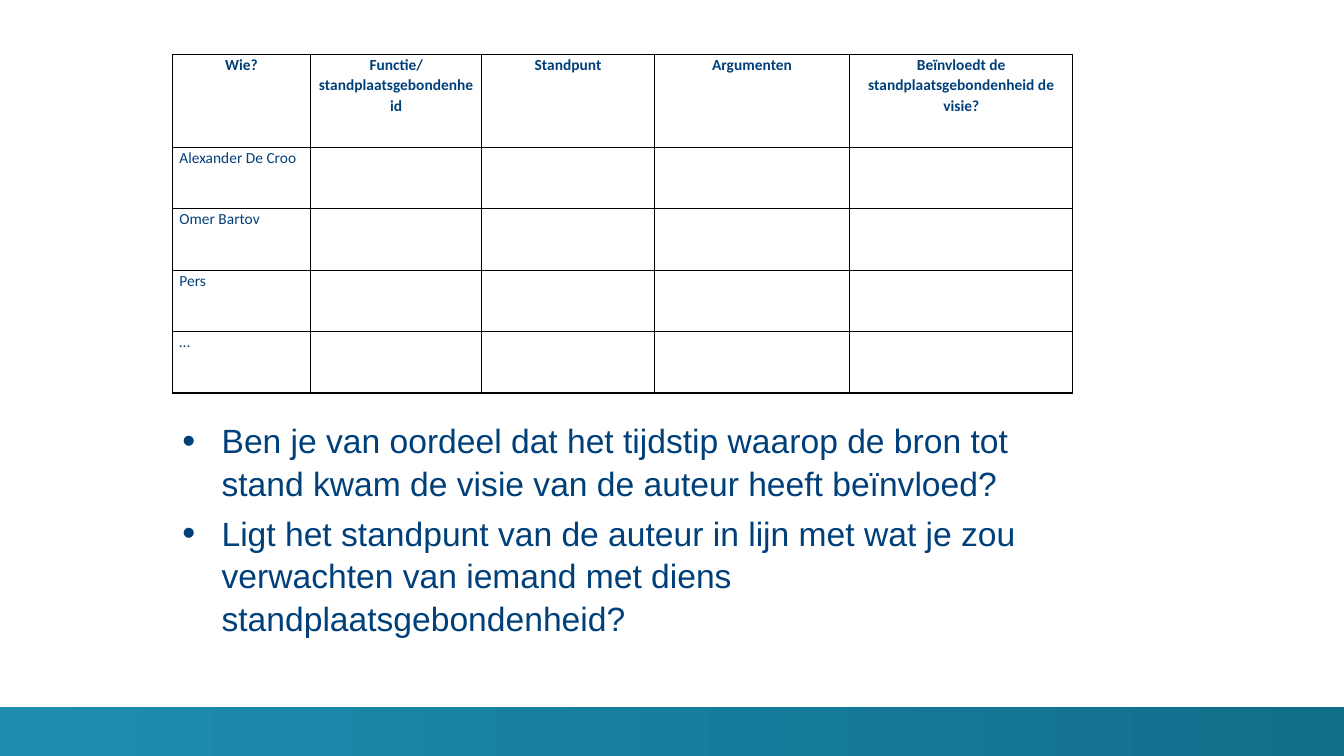
from lxml.etree import SubElement
from pptx import Presentation
from pptx.dml.color import RGBColor
from pptx.enum.shapes import MSO_SHAPE as Preset
from pptx.enum.text import PP_ALIGN as Align
from pptx.oxml.ns import qn
from pptx.util import Inches, Pt

HEADERS = [
    "Wie?",
    "Functie/standplaatsgebondenheid",
    "Standpunt",
    "Argumenten",
    "Beïnvloedt de standplaatsgebondenheid de visie?",
]
SOURCES = ["Alexander De Croo", "Omer Bartov", "Pers", "…"]
QUESTIONS = [
    "Ben je van oordeel dat het tijdstip waarop de bron tot stand kwam de visie van de auteur heeft beïnvloed?",
    "Ligt het standpunt van de auteur in lijn met wat je zou verwachten van iemand met diens standplaatsgebondenheid?",
]
COLUMN_WIDTHS = [1.37, 1.7, 1.71, 1.94, 2.21]
ROW_HEIGHTS = [0.92] + [0.61] * len(SOURCES)
LEFT, TABLE_TOP = 1.71, 0.54
SLIDE_WIDTH, SLIDE_HEIGHT, BAND_TOP = 13.33, 7.5, 7.01
BLUE, BLACK = "00407A", "000000"
BAND_COLORS = ["1D8DB0", "116E8A"]
HEADER_FONT = {"name": "Calibri", "size": Pt(11), "bold": True}
SOURCE_FONT = {**HEADER_FONT, "bold": False}
QUESTION_FONT = {"name": "Arial", "size": Pt(24)}
CELL_FORMAT = {
    "margin_left": Inches(0.07),
    "margin_right": Inches(0.07),
    "margin_top": 0,
    "margin_bottom": 0,
}


def color(value):
    return RGBColor.from_string(value)


def apply(target, values):
    for name, value in values.items():
        setattr(target, name, value)


def write(paragraph, text, font, layout):
    paragraph.add_run().text = text
    apply(paragraph, layout)
    apply(paragraph.font, font)
    apply(paragraph.runs[0].font, font)
    paragraph.runs[0].font.color.rgb = color(BLUE)


def add_borders(cell):
    properties = cell._tc.get_or_add_tcPr()
    for side in ("lnL", "lnR", "lnT", "lnB"):
        line = SubElement(properties, qn(f"a:{side}"), w=str(Pt(1)))
        fill = SubElement(line, qn("a:solidFill"))
        SubElement(fill, qn("a:srgbClr"), val=BLACK)


def add_bullet(paragraph):
    properties = paragraph._p.get_or_add_pPr()
    indent = Inches(0.39)
    properties.set("marL", str(indent))
    properties.set("indent", str(-indent))
    SubElement(properties, qn("a:buSzPct"), val="110000")
    SubElement(properties, qn("a:buFont"), typeface="Arial")
    SubElement(properties, qn("a:buChar"), char="•")


def add_band(slide):
    band = slide.shapes.add_shape(
        Preset.RECTANGLE, 0, Inches(BAND_TOP), Inches(SLIDE_WIDTH), Inches(SLIDE_HEIGHT - BAND_TOP))
    band.shadow.inherit = False
    band.line.fill.background()
    band.fill.gradient()
    band.fill.gradient_angle = 0
    for stop, value in zip(band.fill.gradient_stops, BAND_COLORS):
        stop.color.rgb = color(value)


def add_source_table(slide):
    table = slide.shapes.add_table(
        len(ROW_HEIGHTS), len(COLUMN_WIDTHS), Inches(LEFT), Inches(TABLE_TOP),
        Inches(sum(COLUMN_WIDTHS)), Inches(sum(ROW_HEIGHTS))).table
    apply(table, {"first_row": False, "horz_banding": False})
    for column, width in zip(table.columns, COLUMN_WIDTHS):
        column.width = Inches(width)
    for row, height in zip(table.rows, ROW_HEIGHTS):
        row.height = Inches(height)
    for cell in table.iter_cells():
        apply(cell, CELL_FORMAT)
        add_borders(cell)
        cell.fill.background()
    for index, header in enumerate(HEADERS):
        write(table.cell(0, index).text_frame.paragraphs[0], header, HEADER_FONT,
              {"alignment": Align.CENTER, "line_spacing": 1.07})
    for index, source in enumerate(SOURCES, 1):
        write(table.cell(index, 0).text_frame.paragraphs[0], source, SOURCE_FONT,
              {"alignment": Align.JUSTIFY, "line_spacing": 1.07})


def add_questions(slide):
    frame = slide.shapes.add_textbox(
        Inches(LEFT), Inches(4.1), Inches(9.07), Inches(2.2)).text_frame
    frame.word_wrap = True
    for index, question in enumerate(QUESTIONS):
        paragraph = frame.add_paragraph() if index else frame.paragraphs[0]
        add_bullet(paragraph)
        write(paragraph, question, QUESTION_FONT,
              {"line_spacing": 1.05, "space_before": Pt(5.8 if index else 0)})


def main():
    presentation = Presentation()
    apply(presentation, {"slide_width": Inches(SLIDE_WIDTH), "slide_height": Inches(SLIDE_HEIGHT)})
    slide = presentation.slides.add_slide(presentation.slide_layouts[6])
    add_band(slide)
    add_source_table(slide)
    add_questions(slide)
    presentation.save("out.pptx")


if __name__ == "__main__":
    main()
